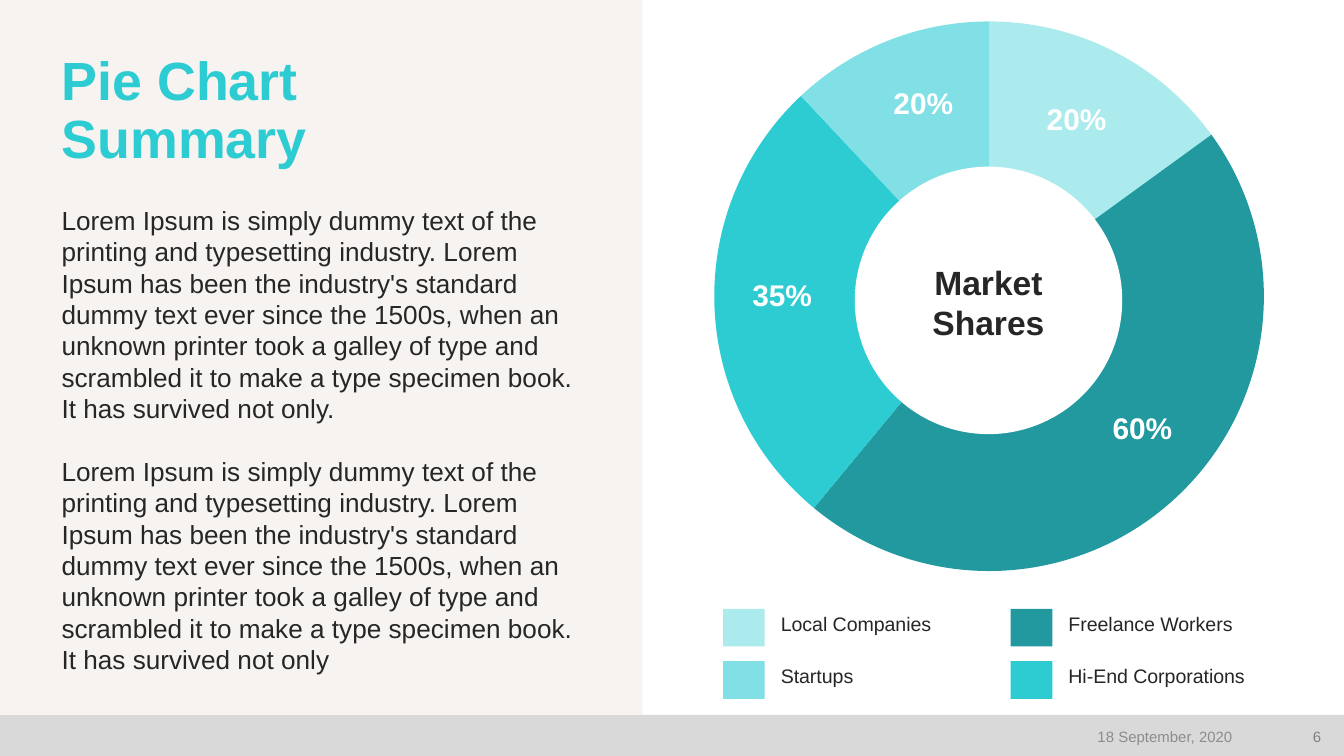
"""Build the market share summary slide."""
from lxml import etree
from pptx import Presentation, util as u
from pptx.chart import data
from pptx.dml import color
from pptx.enum import chart as charts, shapes, text
from pptx.oxml import ns

PALE, DARK, BRIGHT, LIGHT = "ABEBED", "21999F", "2DCCD3", "81E0E5"
INK, WHITE = "262626", "FFFFFF"
LOREM = (
    "Lorem Ipsum\N{NO-BREAK SPACE}is simply dummy text of the printing and typesetting industry. "
    "Lorem Ipsum has been the industry's standard dummy text ever since the 1500s, "
    "when an unknown printer took a galley of type and scrambled it to make a type "
    "specimen book. It has survived not only"
).replace("\N{NO-BREAK SPACE}", " ")


def rgb(value):
    return color.RGBColor.from_string(value)


def write(paragraph, content, size=14, ink=INK, bold=False, align=None,
          spacing=None, before=None, font="Arial"):
    paragraph.text = content
    paragraph.alignment = align
    paragraph.line_spacing = spacing
    if before:
        paragraph.space_before = u.Pt(before)
    for run in paragraph.runs:
        run.font.name = font
        run.font.size = u.Pt(size)
        run.font.bold = bold
        run.font.color.rgb = rgb(ink)


class SlideBuilder:
    font = "Arial"

    def __init__(self, presentation):
        self.slide = presentation.slides.add_slide(presentation.slide_layouts[5])

    def frame(self, shape, anchor, inset):
        frame = shape.text_frame
        frame.word_wrap = True
        frame.auto_size = text.MSO_AUTO_SIZE.NONE
        frame.vertical_anchor = anchor
        if not inset:
            frame.margin_left = frame.margin_right = 0
            frame.margin_top = frame.margin_bottom = 0
        return frame

    def title(self, content, left, top, width, height, **style):
        title = self.slide.shapes.title
        title.left, title.top = u.Inches(left), u.Inches(top)
        title.width, title.height = u.Inches(width), u.Inches(height)
        frame = self.frame(title, text.MSO_ANCHOR.TOP, False)
        write(frame.paragraphs[0], content, font=self.font, **style)
        self.slide.shapes._spTree.append(title._element)

    def label(self, contents, left, top, width, height,
              anchor=text.MSO_ANCHOR.TOP, inset=False, gap=None, **style):
        box = self.slide.shapes.add_textbox(*map(u.Inches, (left, top, width, height)))
        frame = self.frame(box, anchor, inset)
        for index, content in enumerate(contents):
            paragraph = frame.add_paragraph() if index else frame.paragraphs[0]
            write(paragraph, content, before=gap if index else None,
                  font=self.font, **style)

    def block(self, left, top, width, height, fill, kind=shapes.MSO_SHAPE.RECTANGLE):
        shape = self.slide.shapes.add_shape(
            kind, *map(u.Inches, (left, top, width, height)))
        shape.shadow.inherit = False
        shape.fill.solid()
        shape.fill.fore_color.rgb = rgb(fill)
        shape.line.fill.background()

    def pie(self, left, top, size, values, colours, plot_area):
        chart_data = data.CategoryChartData()
        chart_data.categories = [str(n + 1) for n in range(len(values))]
        chart_data.add_series("Series 1", values)
        chart = self.slide.shapes.add_chart(
            charts.XL_CHART_TYPE.PIE,
            *map(u.Inches, (left, top, size, size)), chart_data).chart
        chart.has_legend = chart.has_title = False
        chart.font.name, chart.font.size = self.font, u.Pt(10)
        chart.font.color.rgb = rgb("000000")
        plot = chart.plots[0]
        plot.vary_by_categories = True
        for index, colour in enumerate(colours):
            point = plot.series[0].points[index].format
            point.fill.solid()
            point.fill.fore_color.rgb = rgb(colour)
            point.line.fill.background()
        area = chart._chartSpace.find(".//" + ns.qn("c:plotArea"))
        for old in area.findall(ns.qn("c:layout")):
            area.remove(old)
        layout = etree.Element(ns.qn("c:layout"))
        manual = etree.SubElement(layout, ns.qn("c:manualLayout"))
        settings = [("layoutTarget", "inner"), ("xMode", "edge"), ("yMode", "edge")]
        settings += [(tag, length / size) for tag, length in zip("xywh", plot_area)]
        for tag, value in settings:
            etree.SubElement(manual, ns.qn("c:" + tag), val=str(value))
        area.insert(0, layout)


def main():
    presentation = Presentation()
    presentation.slide_width = u.Inches(10)
    presentation.slide_height = u.Inches(10 * 9 / 16)
    builder = SlideBuilder(presentation)
    center, right = text.PP_ALIGN.CENTER, text.PP_ALIGN.RIGHT
    middle = text.MSO_ANCHOR.MIDDLE

    builder.block(0, 5.32, 10, 0.31, "D9D9D9")
    builder.pie(3.98, -1.13, 6.75, (15, 46, 27, 12),
                (PALE, DARK, BRIGHT, LIGHT), (1.29, 1.29, 4.18, 4.09))
    builder.block(6.36, 1.24, 1.99, 1.99, WHITE, shapes.MSO_SHAPE.OVAL)
    shares = [("35%", 5.5, 2.06, 0.64), ("20%", 7.69, 0.75, 0.64),
              ("60%", 8.11, 3.05, 0.78), ("20%", 6.55, 0.63, 0.64)]
    for share, left, top, width in shares:
        builder.label([share], left, top, width, 0.34,
                      size=16, ink=WHITE, bold=True, align=center)
    builder.label(["Market Shares"], 6.89, 1.95, 0.93, 0.27,
                  size=18, bold=True, align=center)

    builder.block(0, 0, 4.78, 5.32, "F7F3F1")
    builder.title("Pie Chart\vSummary", 0.46, 0.4, 9.1, 0.52, size=28.8,
                  ink=BRIGHT, bold=True, align=text.PP_ALIGN.LEFT, spacing=0.9)
    builder.label([LOREM + ".", LOREM], 0.36, 1.47, 4.03, 3.87,
                  inset=True, gap=16.8)

    legend = [("Local Companies", PALE), ("Freelance Workers", DARK),
              ("Startups", LIGHT), ("Hi-End Corporations", BRIGHT)]
    for index, (name, colour) in enumerate(legend):
        row, column = divmod(index, 2)
        left, top = 5.38 + 2.14 * column, 4.53 + 0.39 * row
        builder.block(left, top, 0.31, 0.28, colour)
        builder.label([name], left + 0.43, top + 0.05, 1.65, 0.15,
                      anchor=middle, size=10.5, spacing=0.8)

    builder.label(["18 September, 2020"], 7.02, 5.35, 2.25, 0.26, anchor=middle,
                  inset=True, size=8, ink="8C8C8C", align=right)
    builder.label(["6"], 9.56, 5.35, 0.37, 0.26, anchor=middle,
                  inset=True, size=8, ink="808080", align=right)
    presentation.save("out.pptx")


if __name__ == "__main__":
    main()
